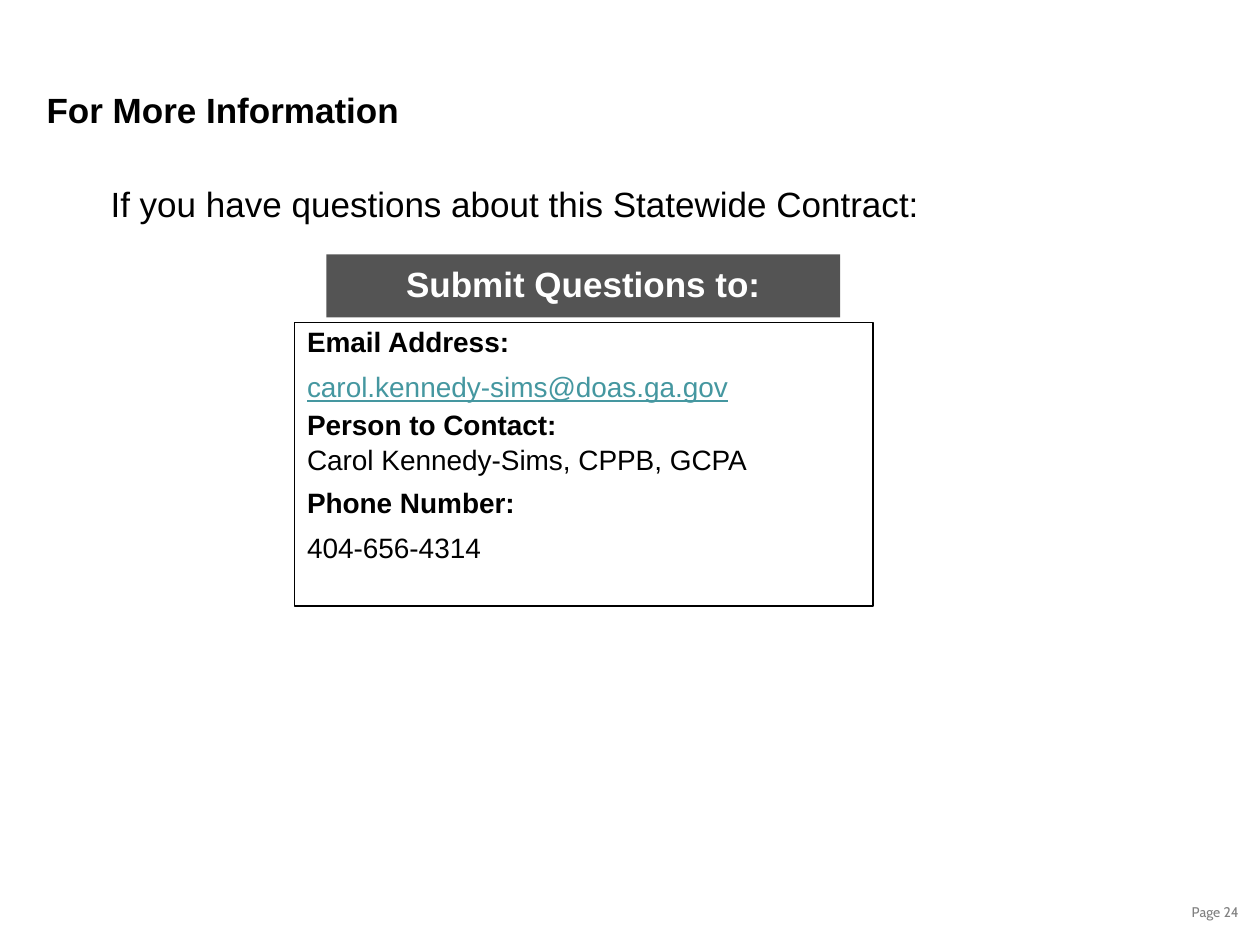
from dataclasses import dataclass

from lxml import etree
from pptx import Presentation, util as u
from pptx.dml.color import RGBColor
from pptx.enum import shapes, text
from pptx.oxml.ns import qn


@dataclass(frozen=True)
class Theme:
    black: str = "000000"
    white: str = "FFFFFF"
    link: str = "4597A0"
    muted: str = "808080"
    body_font: str = "Arial"
    page_font: str = "Cabin"
    heading: int = 20
    detail: int = 16
    page: int = 8
    banner_opacity: int = 67


class SlideBuilder:
    def __init__(self, slide, theme):
        self.slide = slide
        self.theme = theme

    def set_lines(self, element, lines, size, anchor=text.MSO_ANCHOR.TOP,
                  align=text.PP_ALIGN.LEFT, spacing=1.0, gap=0):
        frame = element.text_frame
        frame.word_wrap = True
        frame.vertical_anchor = anchor
        for index, (wording, look) in enumerate(lines):
            line = frame.paragraphs[0] if index == 0 else frame.add_paragraph()
            layout = {"alignment": align, "line_spacing": spacing,
                      "space_before": u.Pt(gap if index else 0)}
            layout.update(look.get("layout", {}))
            for key, value in layout.items():
                setattr(line, key, value)
            run = line.add_run()
            run.text = wording
            letters = {"name": self.theme.body_font, "size": u.Pt(size), "bold": False}
            letters.update(look.get("font", {}))
            for key, value in letters.items():
                setattr(run.font, key, value)
            run.font.color.rgb = RGBColor.from_string(look.get("color", self.theme.black))

    def label(self, place, lines, size, **layout):
        label = self.slide.shapes.add_textbox(*map(u.Cm, place))
        self.set_lines(label, lines, size, **layout)

    def panel(self, place, lines, size, fill=None, opacity=100, outline=None, **layout):
        panel = self.slide.shapes.add_shape(
            shapes.MSO_SHAPE.RECTANGLE, *map(u.Cm, place))
        panel.shadow.inherit = False
        if fill:
            panel.fill.solid()
            panel.fill.fore_color.rgb = RGBColor.from_string(fill)
            tint = panel.element.spPr.find(qn("a:solidFill"))[0]
            etree.SubElement(tint, qn("a:alpha")).set("val", str(opacity * 1000))
        else:
            panel.fill.background()
        if outline:
            panel.line.color.rgb = RGBColor.from_string(outline)
            panel.line.width = u.Pt(1)
        else:
            panel.line.fill.background()
        self.set_lines(panel, lines, size, **layout)


def main():
    theme = Theme()
    deck = Presentation()
    deck.slide_width, deck.slide_height = u.Cm(25.4), u.Cm(19.05)
    builder = SlideBuilder(deck.slides.add_slide(deck.slide_layouts[6]), theme)

    strong = {"font": {"bold": True}}
    tight = {"line_spacing": 0.6}
    centre = text.PP_ALIGN.CENTER
    middle = text.MSO_ANCHOR.MIDDLE

    builder.label((23.6, 18.08, 1.8, 0.69),
                  [("Page 24", {"font": {"name": theme.page_font}, "color": theme.muted})],
                  theme.page, align=centre)
    builder.panel((6.58, 5.13, 10.36, 1.27),
                  [("Submit Questions to:", {**strong, "color": theme.white})],
                  theme.heading, fill=theme.black, opacity=theme.banner_opacity,
                  anchor=middle, align=centre, spacing=0.9)
    contact = [
        ("Email Address:", strong),
        ("carol.kennedy-sims@doas.ga.gov",
         {"font": {"underline": True}, "color": theme.link}),
        ("Person to Contact:", {**strong, "layout": tight}),
        ("Carol Kennedy-Sims, CPPB, GCPA", {"layout": tight}),
        ("Phone Number:", strong),
        ("404-656-4314", {}),
    ]
    builder.panel((5.94, 6.5, 11.66, 5.72), contact, theme.detail,
                  outline=theme.black, spacing=0.9, gap=8.6)
    builder.label((1.98, 3.66, 18.44, 1.02),
                  [("If you have questions about this Statewide Contract:", {})],
                  theme.heading, spacing=0.9)
    builder.label((0.69, 1.65, 18.42, 2.11),
                  [("For More Information", strong)], theme.heading)

    deck.save("out.pptx")


if __name__ == "__main__":
    main()
